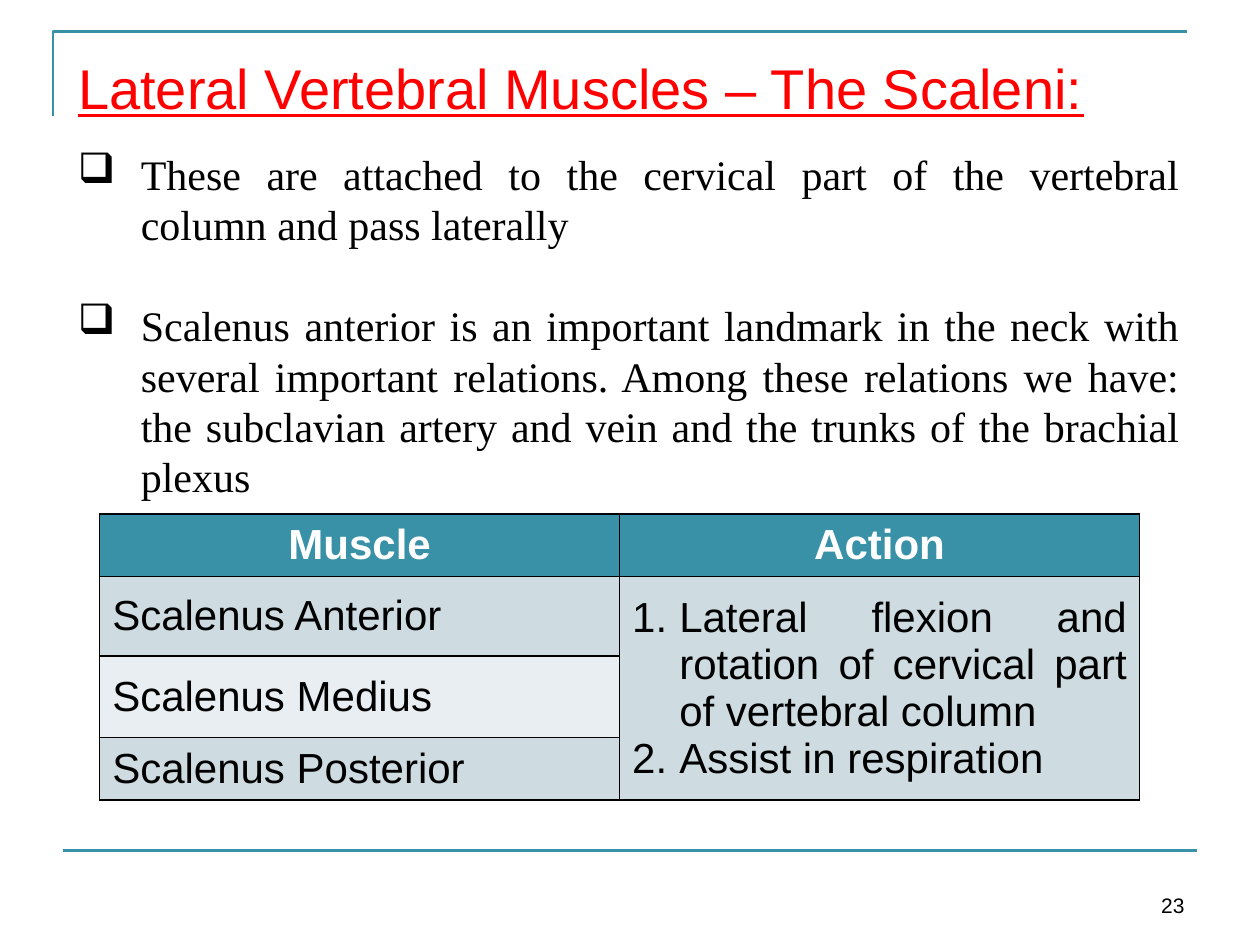
"""Build the slide on the lateral vertebral muscles."""
from lxml.etree import SubElement as Sub
from pptx import Presentation
from pptx.dml.color import RGBColor as Rgb
from pptx.enum.shapes import MSO_CONNECTOR as Link
from pptx.enum.text import MSO_ANCHOR as Anchor, MSO_AUTO_SIZE as Auto, PP_ALIGN as Align
from pptx.oxml.ns import qn
from pptx.util import Cm, Pt

HEX = {"teal": "3891A7", "red": "FF0000", "black": "000000", "white": "FFFFFF",
       "band": "CEDCE1", "pale": "E8EEF1"}
FACTS = [
    "These are attached to the cervical part of the vertebral column and pass laterally",
    "Scalenus anterior is an important landmark in the neck with several important relations. "
    "Among these relations we have: the subclavian artery and vein and the trunks of the "
    "brachial plexus",
]
ACTS = ["Lateral flexion and rotation of cervical part of vertebral column",
        "Assist in respiration"]
ROWS = [("Scalenus Anterior", "band", 1.6), ("Scalenus Medius", "pale", 1.65),
        ("Scalenus Posterior", "band", 1.26)]


def tint(name):
    return Rgb.from_string(HEX[name])


def style(para, size, color="black", face="Arial", align=Align.LEFT, bold=False):
    para.alignment = align
    font = para.font
    font.size, font.name, font.bold = Pt(size), face, bold
    font.color.rgb = tint(color)


def mark(para, indent, tag, **attrs):
    props = para._p.get_or_add_pPr()
    props.set("marL", str(Cm(indent)))
    props.set("indent", str(-Cm(indent)))
    Sub(props, qn(tag), attrs)


def rule(shape):
    shape.line.color.rgb = tint("teal")
    shape.line.width = Pt(1.5)


def frame(slide):
    pen = slide.shapes.build_freeform(Cm(1.07), Cm(2.34))
    pen.add_line_segments([(Cm(1.07), Cm(0.64)), (Cm(23.93), Cm(0.64))], close=False)
    edge = pen.convert_to_shape()
    edge.shadow.inherit = False
    edge.fill.background()
    rule(edge)
    base = slide.shapes.add_connector(Link.STRAIGHT, Cm(1.27), Cm(17.15), Cm(24.13), Cm(17.15))
    Sub(base._element.spPr, qn("a:effectLst"))
    rule(base)


def head(slide, text):
    title = slide.shapes.title
    title.left, title.top, title.width, title.height = Cm(1.32), Cm(0.94), Cm(23.39), Cm(1.63)
    body = title.text_frame
    body.text = text
    body.auto_size = Auto.NONE
    body.vertical_anchor = Anchor.MIDDLE
    para = body.paragraphs[0]
    style(para, 32, "red")
    para.font.underline = True


def box(slide, text, left, top, width, height, anchor=Anchor.TOP):
    body = slide.shapes.add_textbox(Cm(left), Cm(top), Cm(width), Cm(height)).text_frame
    body.word_wrap = True
    body.vertical_anchor = anchor
    body.text = text
    return body.paragraphs


def facts(slide):
    for i, para in enumerate(box(slide, "\n".join(FACTS), 1.32, 2.87, 22.71, 7.44)):
        para.line_spacing = Pt(28.8)
        if i:
            para.space_before = Pt(28.8)
        mark(para, 1.27, "a:buChar", char="❑")
        style(para, 24, face="Times New Roman", align=Align.JUSTIFY)


def fill(cell, color):
    props = cell._tc.get_or_add_tcPr()
    for side in ("lnL", "lnR", "lnT", "lnB"):
        line = Sub(props, qn(f"a:{side}"), w=str(Pt(1)))
        Sub(Sub(line, qn("a:solidFill")), qn("a:srgbClr"), val=HEX["black"])
    cell.fill.solid()
    cell.fill.fore_color.rgb = tint(color)
    cell.vertical_anchor = Anchor.MIDDLE


def write(cell, text, **look):
    cell.text = text
    for para in cell.text_frame.paragraphs:
        style(para, 24, **look)


def grid(slide):
    table = slide.shapes.add_table(len(ROWS) + 1, 2, Cm(2.01), Cm(10.36),
                                   Cm(20.96), Cm(5.77)).table
    table.rows[0].height = Cm(1.26)
    for col, text in enumerate(("Muscle", "Action")):
        cell = table.cell(0, col)
        fill(cell, "teal")
        write(cell, text, color="white", align=Align.CENTER, bold=True)
    for row, (name, color, height) in enumerate(ROWS, 1):
        table.rows[row].height = Cm(height)
        fill(table.cell(row, 0), color)
        write(table.cell(row, 0), name)
        fill(table.cell(row, 1), "band")
    acts = table.cell(1, 1)
    acts.merge(table.cell(len(ROWS), 1))
    acts.text = "\n".join(ACTS)
    for para in acts.text_frame.paragraphs:
        mark(para, 0.95, "a:buAutoNum", type="arabicPeriod")
        style(para, 24, align=Align.JUSTIFY)


def main():
    deck = Presentation()
    deck.slide_width, deck.slide_height = Cm(25.4), Cm(19.05)
    slide = deck.slides.add_slide(deck.slide_layouts[5])
    frame(slide)
    head(slide, "Lateral Vertebral Muscles – The Scaleni:")
    grid(slide)
    facts(slide)
    page = box(slide, "23", 18.21, 17.35, 5.92, 1.27, Anchor.BOTTOM)
    style(page[0], 12, align=Align.RIGHT)
    deck.save("out.pptx")


if __name__ == "__main__":
    main()
